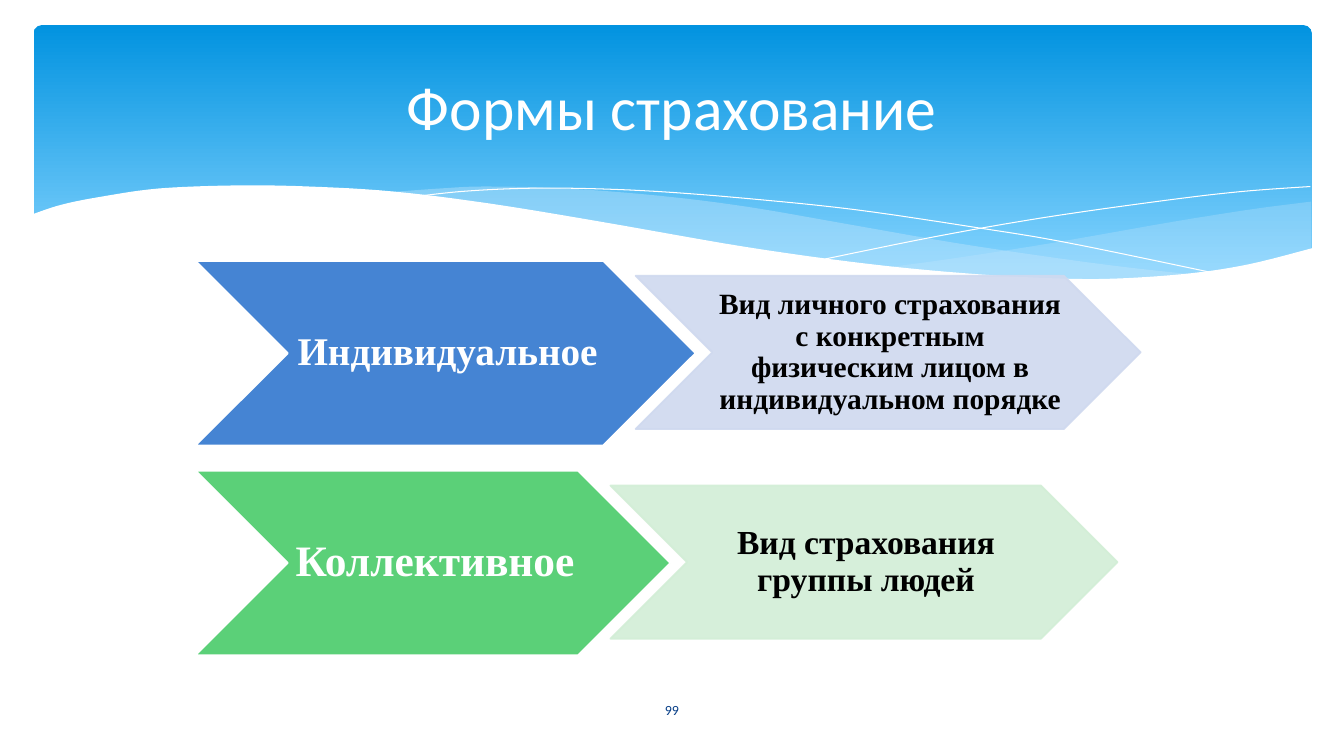
from dataclasses import dataclass
from itertools import chain

from lxml.etree import SubElement
from pptx import Presentation
from pptx.dml.color import RGBColor
from pptx.enum.shapes import MSO_SHAPE as Preset
from pptx.enum.text import MSO_ANCHOR as Anchor, PP_ALIGN as Align
from pptx.oxml.ns import qn
from pptx.util import Inches, Pt

SLIDE_WIDTH, SLIDE_HEIGHT = Inches(13.33), Inches(7.5)
STEPS = 6
WHITE, BLACK = "FFFFFF", "000000"
Point = tuple[float, float]


@dataclass
class Area:
    left: float
    top: float
    width: float
    height: float


@dataclass
class Wave:
    curves: list[list[Point]]
    color: str = WHITE
    opacity: int = 100
    outline_only: bool = False


@dataclass
class Wording:
    text: str
    size: int
    color: str
    font: str = "Times New Roman"
    bold: bool = True
    line_spacing: float = 0.9


@dataclass
class InsuranceForm:
    name: Wording
    meaning: Wording
    top: float
    name_width: float
    meaning_width: float
    name_color: str
    meaning_color: str


WAVES = [
    Wave([[(97.55, 26.67), (93.45, 27.6), (89.1, 28.8), (86, 29.73),
           (77.85, 32.27), (70.6, 34.27), (66.15, 35.33)],
          [(66.15, 35.33), (70.5, 36.13), (75.65, 36.8), (80.3, 37.07),
           (85.4, 36.8), (89.7, 36), (93.5, 34.93), (97.55, 32.93)]],
         "C6E7FC", 29),
    Wave([[(28.65, 25.47), (32.8, 24.93), (36.15, 24.67), (42, 24.93),
           (48.9, 25.87), (55.5, 27.33), (62.9, 29.6), (70.6, 32),
           (77.55, 33.87), (83.7, 35.33), (89.25, 36.4)],
          [(89.25, 36.4), (85.7, 36.93), (81.75, 37.07), (77.25, 36.93),
           (72.2, 36.53), (66.5, 35.47), (60.15, 34), (52.95, 32),
           (44.9, 29.6), (40.4, 28.13), (34.2, 26.53), (28.65, 25.47)]],
         "C6E7FC", 40),
    Wave([[(30.9, 26), (34.35, 25.33), (38.7, 24.93), (43.3, 24.93),
           (48.9, 25.33), (55.65, 26.27), (63.6, 27.73), (72.75, 30.13),
           (79.5, 32.13), (90.75, 36.27)]], outline_only=True),
    Wave([[(61.35, 34.27), (69.5, 31.33), (77.6, 28.8), (86.6, 26.53),
           (92.4, 25.33), (97.5, 24.67)]], outline_only=True),
    Wave([[(97.7, 32.8), (93, 34.93), (88.7, 36.13), (83.7, 36.8),
           (79.35, 36.87), (72.7, 36.27), (64.7, 34.93), (55.5, 32.67),
           (44.7, 29.33), (36.45, 26.93), (29.25, 25.33), (22.95, 24.67),
           (17.6, 24.53), (11.85, 24.93), (7.6, 26), (4.6, 27.07),
           (2.33, 28.4)],
          [(2.33, 43.87), (97.7, 43.87)]]),
]

FORMS = [
    InsuranceForm(
        Wording("Индивидуальное", 28, WHITE),
        Wording("Вид личного страхования с конкретным физическим лицом "
                "в индивидуальном порядке", 21, BLACK),
        34.53, 37.2, 37.58, "4584D3", "CFD9EF"),
    InsuranceForm(
        Wording("Коллективное", 31, WHITE),
        Wording("Вид страхования группы людей", 24, BLACK),
        62.27, 35.33, 37.73, "5BD078", "D2EED6"),
]
FORM_LEFT, NAME_HEIGHT, MEANING_HEIGHT = 14.55, 24.4, 20.27
OVERLAP, DROP = 4.46, 1.95
CHEVRON_INSETS = {"margin_left": Inches(0.04), "margin_right": 0,
                  "margin_top": Inches(0.02), "margin_bottom": Inches(0.02)}


def rgb(color: str) -> RGBColor:
    return RGBColor.from_string(color)


def across(share: float) -> int:
    return round(SLIDE_WIDTH * share / 100)


def down(share: float) -> int:
    return round(SLIDE_HEIGHT * share / 100)


def place(area: Area) -> tuple[int, int, int, int]:
    return across(area.left), down(area.top), across(area.width), down(area.height)


def apply(target, values: dict) -> None:
    for attribute, value in values.items():
        setattr(target, attribute, value)


def smooth(knots: list[Point]) -> list[Point]:
    padded = [knots[0], *knots, knots[-1]]
    curve = [knots[0]]
    for a, b, c, d in zip(padded, padded[1:], padded[2:], padded[3:]):
        for step in range(1, STEPS + 1):
            t = step / STEPS
            curve.append(tuple(
                (2 * q + (r - p) * t + (2 * p - 5 * q + 4 * r - s) * t ** 2
                 + (3 * q - p - 3 * r + s) * t ** 3) / 2
                for p, q, r, s in zip(a, b, c, d)))
    return curve


def set_opacity(shape, opacity: int) -> None:
    if opacity < 100:
        for color in shape.element.spPr.iter(qn("a:srgbClr")):
            SubElement(color, qn("a:alpha"), val=str(opacity * 1000))


def write(shape, wording: Wording, insets: dict) -> None:
    frame = shape.text_frame
    apply(frame, {"word_wrap": True, "vertical_anchor": Anchor.MIDDLE, **insets})
    paragraph = frame.paragraphs[0]
    apply(paragraph, {"alignment": Align.CENTER, "line_spacing": wording.line_spacing})
    run = paragraph.add_run()
    run.text = wording.text
    apply(run.font, {"name": wording.font, "size": Pt(wording.size), "bold": wording.bold})
    run.font.color.rgb = rgb(wording.color)


def draw_header(slide, area: Area) -> None:
    header = slide.shapes.add_shape(Preset.ROUNDED_RECTANGLE, *place(area))
    header.adjustments[0] = 0.03
    header.shadow.inherit = False
    header.line.fill.background()
    header.fill.gradient()
    header.fill.gradient_angle = 270
    for stop, color, position in zip(header.fill.gradient_stops, ("0293E0", "83D3FE"), (0, 0.9)):
        stop.color.rgb = rgb(color)
        stop.position = position


def draw_wave(slide, wave: Wave) -> None:
    start, *rest = [(across(x), down(y))
                    for x, y in chain.from_iterable(map(smooth, wave.curves))]
    builder = slide.shapes.build_freeform(*start)
    builder.add_line_segments(rest, close=not wave.outline_only)
    shape = builder.convert_to_shape()
    shape.shadow.inherit = False
    painted, empty = shape.fill, shape.line.fill
    if wave.outline_only:
        painted, empty = empty, painted
        shape.line.width = 0
    painted.solid()
    painted.fore_color.rgb = rgb(wave.color)
    empty.background()
    set_opacity(shape, wave.opacity)


def draw_chevron(slide, area: Area, wording: Wording, fill: str, line: str,
                 opacity: int = 100) -> None:
    chevron = slide.shapes.add_shape(Preset.CHEVRON, *place(area))
    chevron.shadow.inherit = False
    chevron.fill.solid()
    chevron.fill.fore_color.rgb = rgb(fill)
    chevron.line.color.rgb = rgb(line)
    chevron.line.width = Pt(1.25)
    set_opacity(chevron, opacity)
    write(chevron, wording, CHEVRON_INSETS)


def draw_form(slide, form: InsuranceForm) -> None:
    draw_chevron(slide, Area(FORM_LEFT, form.top, form.name_width, NAME_HEIGHT),
                 form.name, form.name_color, WHITE)
    meaning_left = FORM_LEFT + form.name_width - OVERLAP
    draw_chevron(slide, Area(meaning_left, form.top + DROP, form.meaning_width, MEANING_HEIGHT),
                 form.meaning, form.meaning_color, form.meaning_color, 90)


def draw_caption(slide, area: Area, wording: Wording) -> None:
    write(slide.shapes.add_textbox(*place(area)), wording, {})


def main() -> None:
    deck = Presentation()
    apply(deck, {"slide_width": SLIDE_WIDTH, "slide_height": SLIDE_HEIGHT})
    slide = deck.slides.add_slide(deck.slide_layouts[6])
    draw_header(slide, Area(2.5, 3.33, 95.1, 36))
    for wave in WAVES:
        draw_wave(slide, wave)
    draw_caption(slide, Area(5, 4.93, 90, 18.27),
                 Wording("Формы страхование", 44, WHITE, "Calibri", False, 1.0))
    for form in FORMS:
        draw_form(slide, form)
    draw_caption(slide, Area(43.65, 91.2, 12.7, 5.33),
                 Wording("99", 10, "073E87", "Calibri", False, 1.0))
    deck.save("out.pptx")


if __name__ == "__main__":
    main()
